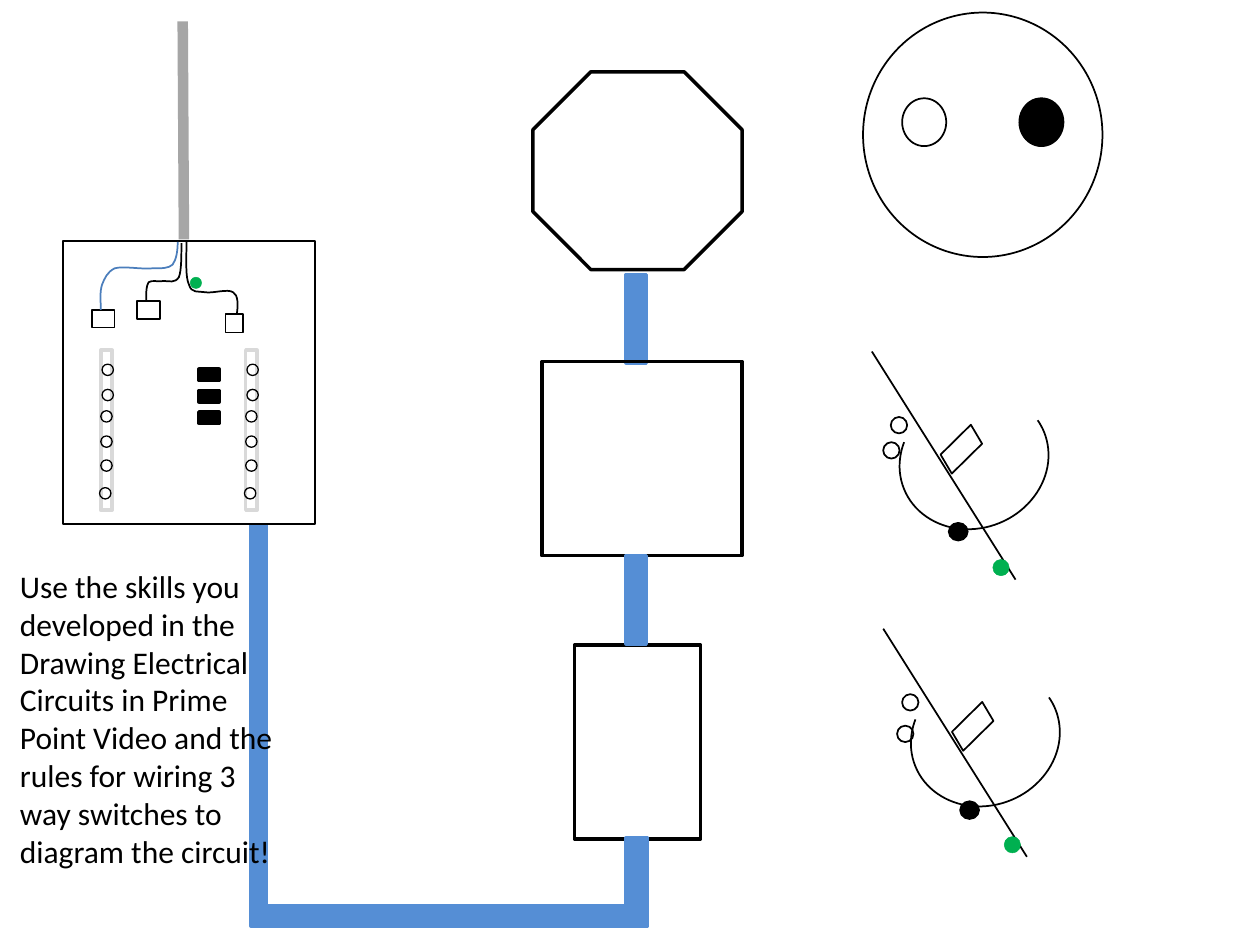
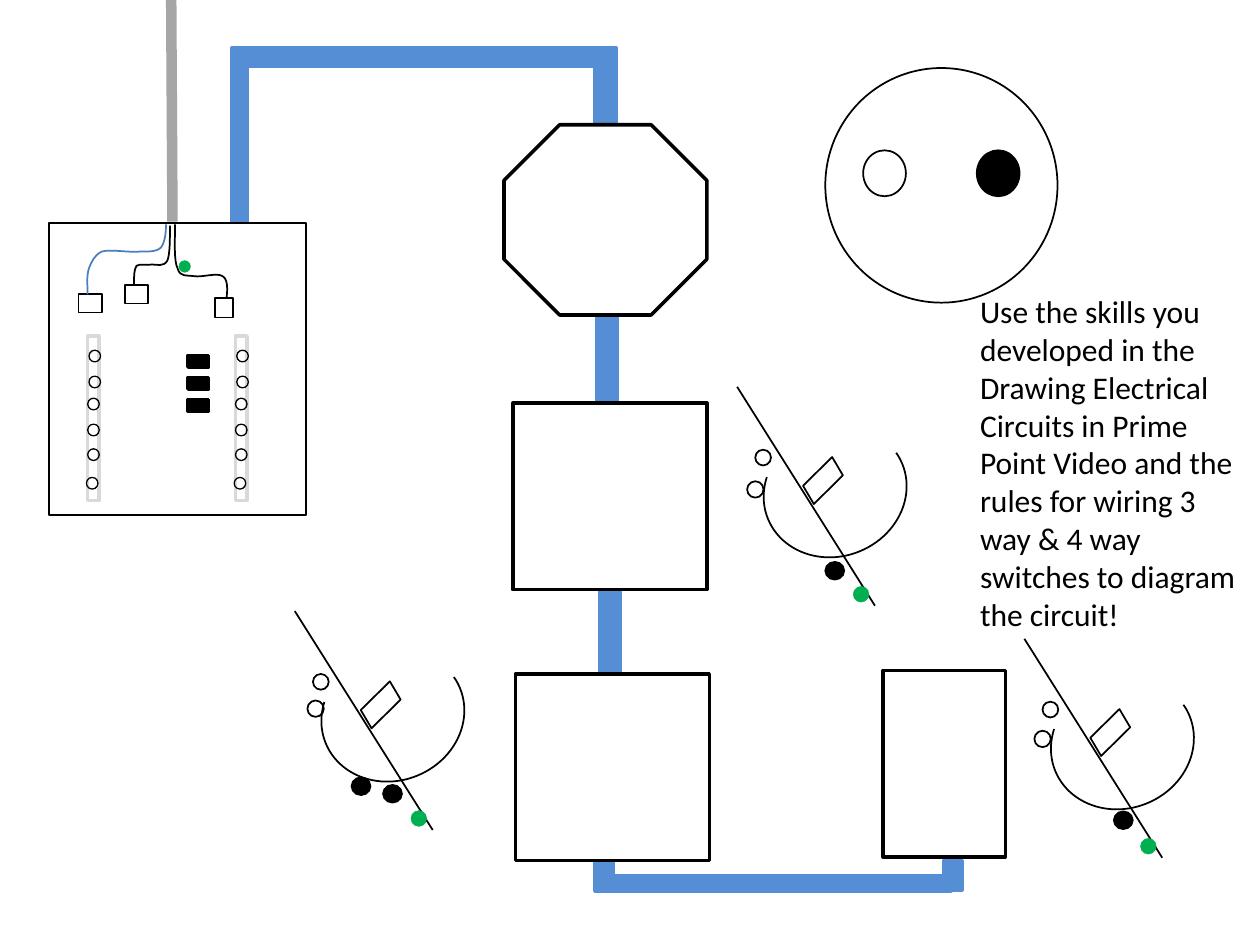
"""Draw two wiring exercises with a service panel, outlet boxes and multi-way switches."""
import lxml.etree
import pptx
import pptx.dml.color
import pptx.enum.shapes
import pptx.enum.text
import pptx.oxml.ns
import pptx.util

Inches = pptx.util.Inches
Pt = pptx.util.Pt
qn = pptx.oxml.ns.qn
SHAPE = pptx.enum.shapes.MSO_SHAPE

COLORS = {
    "ink": "000000",
    "paper": "FFFFFF",
    "conduit": "558ED5",
    "neutral": "4B7EBC",
    "ground": "00B050",
    "service": "A6A6A6",
    "bus": "D9D9D9",
}
WIRES = [
    ("neutral", [(0.91, 0.01), (0.91, 0.08), (0.9, 0.15), (0.87, 0.19),
                 (0.84, 0.22), (0.79, 0.22), (0.71, 0.22),
                 (0.63, 0.23), (0.48, 0.2), (0.41, 0.22),
                 (0.35, 0.25), (0.33, 0.3), (0.31, 0.35),
                 (0.29, 0.41), (0.3, 0.48), (0.3, 0.55)]),
    ("ink", [(0.94, 0.02), (0.94, 0.13), (0.94, 0.24), (0.92, 0.29),
             (0.89, 0.34), (0.84, 0.32), (0.8, 0.32),
             (0.76, 0.33), (0.71, 0.31), (0.68, 0.33),
             (0.66, 0.36), (0.66, 0.41), (0.66, 0.47)]),
    ("ink", [(0.98, 0.01), (0.98, 0.15), (0.97, 0.29), (1, 0.35),
             (1.02, 0.42), (1.07, 0.4), (1.13, 0.41),
             (1.19, 0.42), (1.31, 0.38), (1.35, 0.41),
             (1.39, 0.43), (1.39, 0.51), (1.38, 0.58)]),
]
BUS_SCREWS = [(0.01, 0.98), (0.01, 1.18), (0, 1.35), (0, 1.55), (0, 1.74), (-0.01, 1.96)]


class Diagram:
    """Hold the drawing style, the current slide and the current origin and scale."""

    def __init__(self):
        self.deck = pptx.Presentation()
        self.deck.slide_width = Inches(10)
        self.deck.slide_height = Inches(7.5)

    def new_slide(self):
        self.slide = self.deck.slides.add_slide(self.deck.slide_layouts[6])
        self.place()

    def place(self, left=0, top=0, scale_x=1, scale_y=1):
        self.left, self.top = left, top
        self.scale_x, self.scale_y = scale_x, scale_y

    def point(self, x, y):
        return Inches(self.left + x * self.scale_x), Inches(self.top + y * self.scale_y)

    def color(self, name):
        return pptx.dml.color.RGBColor.from_string(COLORS[name])

    def paint(self, part, fill, line, weight):
        part.shadow.inherit = False
        if fill:
            part.fill.solid()
            part.fill.fore_color.rgb = self.color(fill)
        else:
            part.fill.background()
        part.line.color.rgb = self.color(line)
        part.line.width = Pt(weight)

    def shape(self, kind, x, y, width, height, fill=None, line="ink", weight=1, rotation=0):
        part = self.slide.shapes.add_shape(
            kind, *self.point(x, y),
            Inches(width * self.scale_x), Inches(height * self.scale_y))
        self.paint(part, fill, line, weight)
        part.rotation = rotation
        return part

    def box(self, *area, **style):
        self.shape(SHAPE.RECTANGLE, *area, **style)

    def circle(self, *area, **style):
        self.shape(SHAPE.OVAL, *area, **style)

    def ground(self, x, y, size):
        self.circle(x, y, size, size, fill="ground", line="ground", weight=0.25)

    def conduit(self, *area):
        self.box(*area, fill="conduit", line="conduit", weight=2)

    def line(self, start, end, color="ink", weight=1):
        straight = self.slide.shapes.add_connector(
            pptx.enum.shapes.MSO_CONNECTOR.STRAIGHT, *self.point(*start), *self.point(*end))
        straight.line.color.rgb = self.color(color)
        straight.line.width = Pt(weight)
        lxml.etree.SubElement(straight._element.spPr, qn("a:effectLst"))

    def wire(self, points, color):
        start, *controls = [self.point(*point) for point in points]
        builder = self.slide.shapes.build_freeform(*start)
        builder.add_line_segments(controls, close=False)
        curve = builder.convert_to_shape()
        self.paint(curve, None, color, 1)
        segments = list(curve._element.iter(qn("a:lnTo")))
        for first in range(0, len(segments), 3):
            bezier = lxml.etree.Element(qn("a:cubicBezTo"))
            segments[first].addprevious(bezier)
            for segment in segments[first:first + 3]:
                bezier.append(segment[0])
                segment.getparent().remove(segment)

    def panel(self, *placement):
        self.place(*placement)
        self.box(0, 0, 2, 2.25, fill="paper")
        self.line((0.95, -1.74), (0.96, -0.01), "service", 6)
        for area in [(0.59, 0.48, 0.18, 0.14), (1.29, 0.58, 0.14, 0.15), (0.23, 0.55, 0.18, 0.14)]:
            self.box(*area)
        for row in range(3):
            self.box(1.08, 1.02 + 0.17 * row, 0.16, 0.09, fill="ink", weight=2)
        for color, points in WIRES:
            self.wire(points, color)
        self.ground(1.01, 0.29, 0.09)
        for bus in (0.3, 1.45):
            self.box(bus, 0.87, 0.09, 1.27, line="bus", weight=2)
            for shift, y in BUS_SCREWS:
                self.circle(bus + shift, y, 0.09, 0.09, weight=0.75)
        self.place()

    def lamp(self, *placement):
        self.place(*placement)
        self.circle(0, 0, 1.9, 1.94)
        self.circle(0.31, 0.68, 0.35, 0.38)
        self.circle(1.24, 0.68, 0.35, 0.38, fill="ink")
        self.place()

    def switch(self, left, top, traveler, commons, scale=1, arc_end=37.02):
        self.place(left, top, scale, scale)
        body = self.shape(SHAPE.ARC, 0.21, 0.33, 1.2, 1.07, rotation=157.7)
        for index, degrees in enumerate((169.91, arc_end)):
            body.adjustments[index] = degrees * 0.6
        self.line((0, 0), (1.14, 1.81))
        self.circle(0.15, 0.52, 0.13, 0.13)
        self.shape(SHAPE.PARALLELOGRAM, 0.52, 0.69, 0.38, 0.17, rotation=315.4)
        self.ground(0.96, 1.65, 0.13)
        self.place()
        self.circle(*traveler, 0.13, 0.13)
        for common in commons:
            self.circle(*common, 0.15, 0.14, fill="ink")

    def instruction(self, x, y, width, height, text):
        frame = self.slide.shapes.add_textbox(
            *self.point(x, y), Inches(width), Inches(height)).text_frame
        frame.word_wrap = True
        frame.auto_size = pptx.enum.text.MSO_AUTO_SIZE.SHAPE_TO_FIT_TEXT
        paragraph = frame.paragraphs[0]
        paragraph.text = text
        paragraph.font.name = "Calibri"
        paragraph.font.size = Pt(18)
        paragraph.font.color.rgb = self.color("ink")


def draw_three_way(diagram):
    diagram.new_slide()
    for run in [(1.99, 3.92, 0.12, 3.36), (1.99, 7.19, 2.98, 0.16), (4.97, 2.18, 0.16, 0.7)]:
        diagram.conduit(*run)
    diagram.shape(SHAPE.OCTAGON, 4.23, 0.57, 1.66, 1.57, weight=2)
    diagram.lamp(6.85, 0.1)
    diagram.box(4.3, 2.87, 1.59, 1.54, weight=2)
    diagram.box(4.56, 5.12, 1, 1.54, weight=2)
    for run in [(4.97, 4.41, 0.16, 0.7), (4.97, 6.65, 0.17, 0.7)]:
        diagram.conduit(*run)
    diagram.switch(6.92, 2.79, (7.01, 3.51), [(7.53, 4.15)])
    diagram.switch(7.01, 4.99, (7.12, 5.76), [(7.62, 6.36)])
    diagram.panel(0.5, 1.91)
    diagram.instruction(
        0.06, 4.45, 2.31, 2.52,
        "Use the skills you developed in the Drawing Electrical Circuits in Prime Point "
        "Video and the rules for wiring 3 way switches to diagram the circuit!")


def draw_four_way(diagram):
    diagram.new_slide()
    diagram.lamp(6.55, 0.54, 0.97, 0.96)
    for run in [(4.72, 6.83, 0.15, 0.24), (4.72, 6.95, 2.83, 0.12), (7.49, 6.83, 0.15, 0.24),
                (4.74, 2.52, 0.16, 0.68), (1.84, 0.52, 0.12, 1.26), (1.84, 0.38, 2.89, 0.15),
                (4.72, 0.38, 0.17, 0.61), (4.76, 4.68, 0.16, 0.65)]:
        diagram.conduit(*run)
    for outlet in [(7.01, 5.32, 0.97, 1.48), (4.07, 3.2, 1.54, 1.48), (4.09, 5.35, 1.54, 1.48)]:
        diagram.box(*outlet, weight=2)
    diagram.switch(5.85, 3.07, (5.93, 3.82), [(6.55, 4.46)], 0.96, 34.15)
    diagram.switch(8.13, 5.07, (8.21, 5.8), [(8.84, 6.44)], 0.96, 34.15)
    diagram.switch(2.34, 4.85, (2.44, 5.56), [(2.79, 6.17), (3.04, 6.23)], 0.96, 33.66)
    diagram.panel(0.39, 1.77, 1.02, 1.03)
    diagram.shape(SHAPE.OCTAGON, 4, 0.99, 1.61, 1.51, weight=2)
    diagram.instruction(
        7.68, 2.27, 2.24, 2.83,
        "Use the skills you developed in the Drawing Electrical Circuits in Prime Point "
        "Video and the rules for wiring 3 way & 4 way switches to diagram the circuit!")


def main():
    diagram = Diagram()
    draw_three_way(diagram)
    draw_four_way(diagram)
    diagram.deck.save("out.pptx")


if __name__ == "__main__":
    main()
